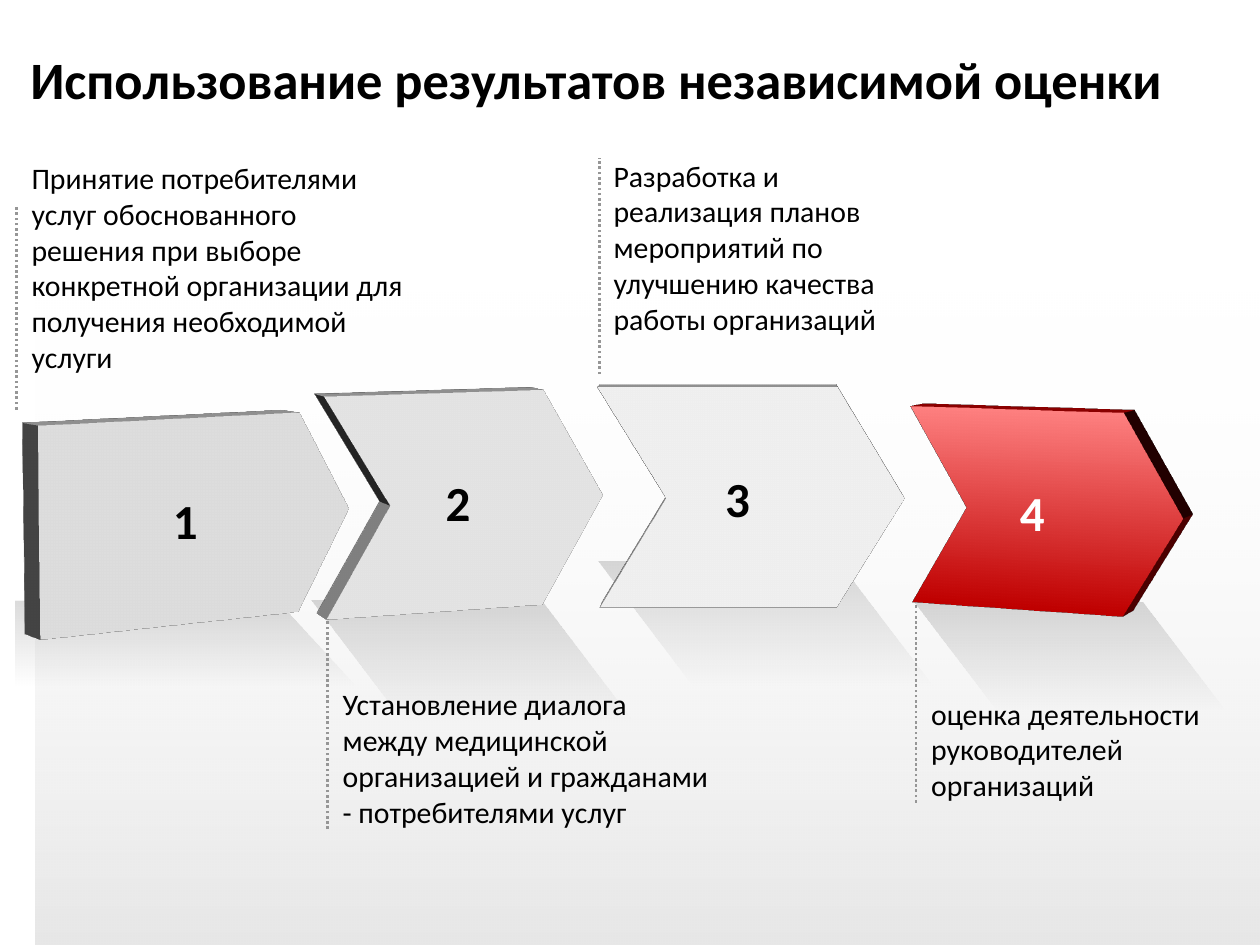
import dataclasses
import typing

import lxml.etree
import pptx
import pptx.dml.color
import pptx.enum.dml
import pptx.enum.shapes
import pptx.enum.text
import pptx.oxml
import pptx.oxml.ns
import pptx.util

Inches = pptx.util.Inches
SHAPE = pptx.enum.shapes.MSO_SHAPE
ANCHOR = pptx.enum.text.MSO_ANCHOR
ALIGN = pptx.enum.text.PP_ALIGN
Box = tuple[float, float, float, float]
NS = 'xmlns:a="http://schemas.openxmlformats.org/drawingml/2006/main"'
COLORS = {"black": "000000", "white": "FFFFFF", "gray": "C8C8C8",
          "dots": "969696", "red": "C00000", "pink": "FF8080"}


@dataclasses.dataclass
class Step:
    number: str
    text: str
    arrow: Box
    caption: Box
    dots: tuple[float, float, float]  # x, bottom, top
    reflection: Box
    turn: int  # degrees the arrow is turned about its vertical axis
    notch: float = 0.303
    anchor: typing.Any = ANCHOR.TOP
    first: bool = False
    accent: bool = False


STEPS = [
    Step("1", "Принятие потребителями услуг обоснованного решения при выборе "
         "конкретной организации для получения необходимой услуги",
         (0.18, 3.31, 2.83, 1.64), (0.13, 1.27, 3.08, 1.65), (0.13, 3.25, 1.63),
         (0.12, 4.76, 2.71, 0.69), 330, notch=0.301, first=True),
    Step("2", "Установление диалога между медицинской организацией и гражданами "
         "- потребителями услуг",
         (2.54, 3.11, 2.34, 1.74), (2.6, 5.07, 3.03, 1.51), (2.6, 6.58, 4.91),
         (2.47, 4.77, 2.56, 0.96), 340, anchor=ANCHOR.BOTTOM),
    Step("3", "Разработка и реализация планов мероприятий по улучшению качества "
         "работы организаций",
         (4.75, 3.07, 2.43, 1.77), (4.75, 1.25, 2.64, 1.57), (4.76, 2.97, 1.25),
         (4.75, 4.46, 2.66, 0.99), 0),
    Step("4", "оценка деятельности руководителей организаций",
         (7.14, 3.26, 2.29, 1.6), (7.27, 5.02, 2.89, 1.35), (7.27, 6.37, 4.79),
         (7.26, 4.78, 2.47, 0.86), 20, anchor=ANCHOR.BOTTOM, accent=True),
]


def inches(box: Box) -> list:
    return [Inches(value) for value in box]


def rgb(name: str):
    return pptx.dml.color.RGBColor.from_string(COLORS[name])


def write(frame, text: str, *, size: float, color: str = "black", bold: bool = False,
          align=ALIGN.LEFT, anchor=ANCHOR.MIDDLE, insets: Box = (0, 0, 0, 0),
          wrap: bool = True, space_before: int = 0) -> None:
    frame.word_wrap = wrap
    frame.auto_size = pptx.enum.text.MSO_AUTO_SIZE.NONE
    frame.vertical_anchor = anchor
    (frame.margin_left, frame.margin_top,
     frame.margin_right, frame.margin_bottom) = inches(insets)
    paragraph = frame.paragraphs[0]
    paragraph.alignment = align
    if space_before:
        paragraph._p.get_or_add_pPr().append(pptx.oxml.parse_xml(
            f'<a:spcBef {NS}><a:spcPct val="{space_before * 1000}"/></a:spcBef>'))
    run = paragraph.add_run()
    run.text = text
    run.font.name = "Calibri"
    run.font.size = pptx.util.Pt(size)
    run.font.bold = bold
    run.font.color.rgb = rgb(color)


def plain(shape) -> None:
    shape.shadow.inherit = False
    shape.line.fill.background()


def gradient(shape, stops: list[tuple[str, int]], angle: int) -> None:
    """Fill from the first (colour, opacity) stop to the last."""
    shape.fill.background()
    marks = "".join(
        f'<a:gs pos="{100000 * i}"><a:srgbClr val="{COLORS[color]}">'
        f'<a:alpha val="{opacity * 1000}"/></a:srgbClr></a:gs>'
        for i, (color, opacity) in enumerate(stops))
    properties = shape.element.spPr
    old = properties.find(pptx.oxml.ns.qn("a:noFill"))
    properties.replace(old, pptx.oxml.parse_xml(
        f'<a:gradFill {NS} rotWithShape="1"><a:gsLst>{marks}</a:gsLst>'
        f'<a:lin ang="{angle * 60000}" scaled="0"/></a:gradFill>'))


def add_depth(shape, turn: int, color: str) -> None:
    """Give an arrow a soft shadow, a perspective view and thickness."""
    properties = shape.element.spPr
    effects = properties.find(pptx.oxml.ns.qn("a:effectLst"))
    effects.append(pptx.oxml.parse_xml(
        f'<a:outerShdw {NS} blurRad="76200" dist="0" dir="18900000">'
        f'<a:srgbClr val="{COLORS["black"]}"><a:alpha val="20000"/></a:srgbClr></a:outerShdw>'))
    properties.append(pptx.oxml.parse_xml(
        f'<a:scene3d {NS}><a:camera prst="perspectiveFront" fov="2700000">'
        f'<a:rot lat="480000" lon="{turn * 60000}" rev="0"/></a:camera>'
        '<a:lightRig rig="threePt" dir="t"/></a:scene3d>'))
    properties.append(pptx.oxml.parse_xml(
        f'<a:sp3d {NS} extrusionH="254000"><a:extrusionClr>'
        f'<a:srgbClr val="{COLORS[color]}"/></a:extrusionClr></a:sp3d>'))


def add_reflection(shapes, step: Step) -> None:
    left, top, width, height = step.reflection
    if step.first:
        builder = shapes.build_freeform(Inches(left), Inches(top + 0.01))
        builder.add_line_segments(
            [(Inches(x), Inches(y)) for x, y in
             [(2.19, top), (left + width, top + height), (left, top + height)]])
        reflection = builder.convert_to_shape()
    else:
        reflection = shapes.add_shape(SHAPE.PARALLELOGRAM, *inches(step.reflection))
        reflection.adjustments[0] = 0.764
        reflection.element.spPr.xfrm.set("flipV", "1")
    plain(reflection)
    gradient(reflection, [("black", 15), ("black", 0)], 90 if step.first else 270)


def add_arrow(shapes, step: Step) -> None:
    kind = SHAPE.PENTAGON if step.first else SHAPE.CHEVRON
    arrow = shapes.add_shape(kind, *inches(step.arrow))
    arrow.adjustments[0] = step.notch
    plain(arrow)
    if step.accent:
        gradient(arrow, [("red", 100), ("pink", 100)], 270)
    else:
        arrow.fill.solid()
        arrow.fill.fore_color.rgb = rgb("gray")
    add_depth(arrow, step.turn, "red" if step.accent else "gray")
    pad = 0.1 if step.accent else 0
    write(arrow.text_frame, step.number, size=28, bold=True, wrap=False,
          color="white" if step.accent else "black",
          align=ALIGN.CENTER if step.first else ALIGN.LEFT,
          insets=(0, 0, 0, 0) if step.first else (0.47, pad, 0.08, pad))


def add_dots(shapes, step: Step) -> None:
    x, bottom, top = step.dots
    dots = shapes.add_connector(pptx.enum.shapes.MSO_CONNECTOR.STRAIGHT,
                                *inches((x, bottom, x, top)))
    dots.line.color.rgb = rgb("dots")
    dots.line.width = pptx.util.Pt(1.5)
    dots.line.dash_style = pptx.enum.dml.MSO_LINE.ROUND_DOT
    lxml.etree.SubElement(dots.element.spPr, pptx.oxml.ns.qn("a:effectLst"))


def add_step(slide, step: Step) -> None:
    shapes = slide.shapes.add_group_shape().shapes
    add_reflection(shapes, step)
    add_arrow(shapes, step)
    caption = shapes.add_textbox(*inches(step.caption))
    write(caption.text_frame, step.text, size=17, anchor=step.anchor,
          insets=(0.12, 0, 0, 0), space_before=20)
    add_dots(shapes, step)


def main() -> None:
    deck = pptx.Presentation()
    deck.slide_width, deck.slide_height = Inches(10), Inches(7.5)
    slide = deck.slides.add_slide(deck.slide_layouts[5])

    # Title
    title = slide.shapes.title
    title.left, title.top, title.width, title.height = inches((0.24, 0.29, 9.29, 0.67))
    write(title.text_frame, "Использование результатов независимой оценки",
          size=30, bold=True)

    # Shaded floor behind everything
    floor = slide.shapes.add_shape(SHAPE.RECTANGLE, *inches((0.28, 2.21, 10, 5.29)))
    plain(floor)
    gradient(floor, [("black", 10), ("white", 0)], 270)
    title.element.addprevious(floor.element)

    # Four steps
    for step in STEPS:
        add_step(slide, step)
    deck.save("out.pptx")


if __name__ == "__main__":
    main()
